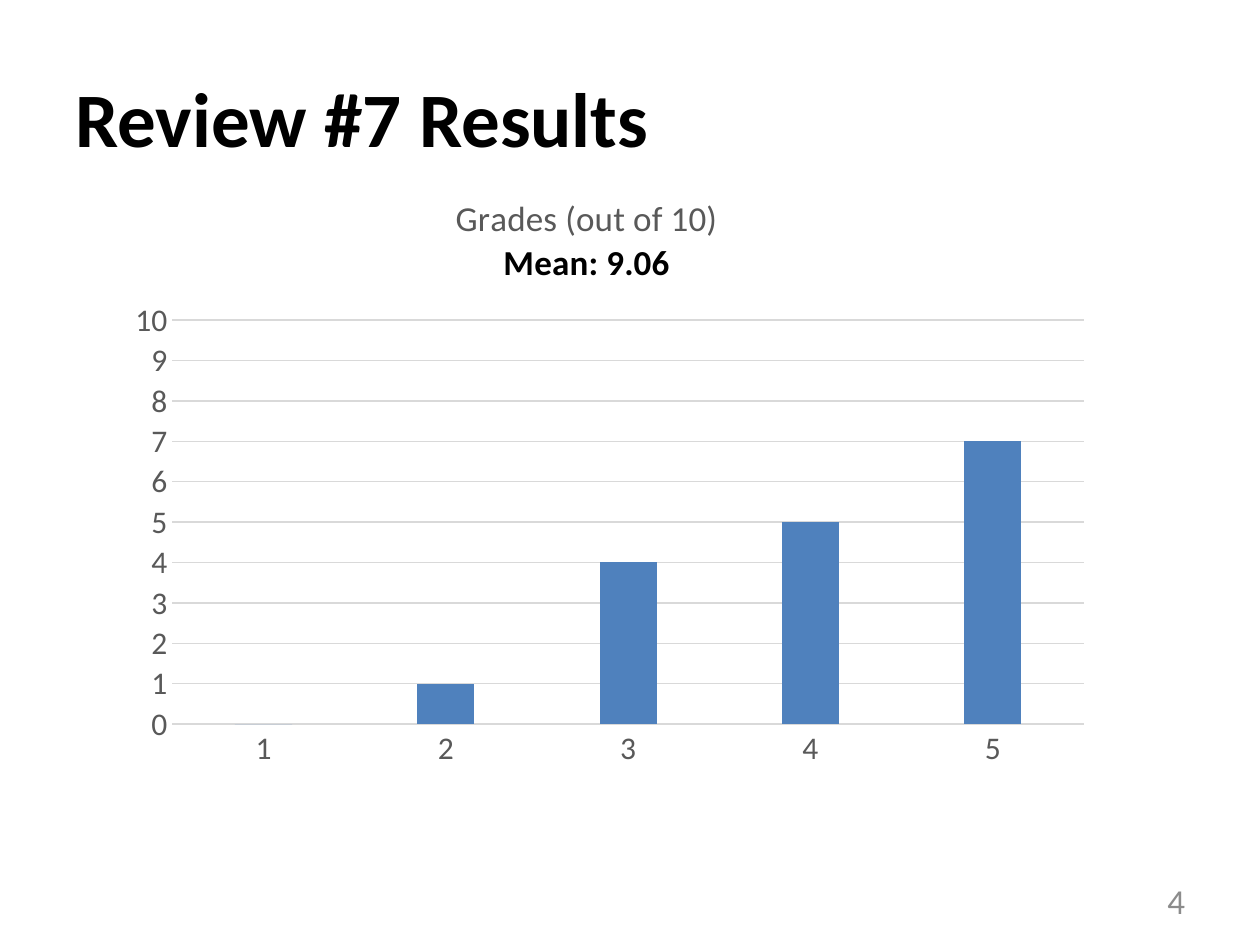
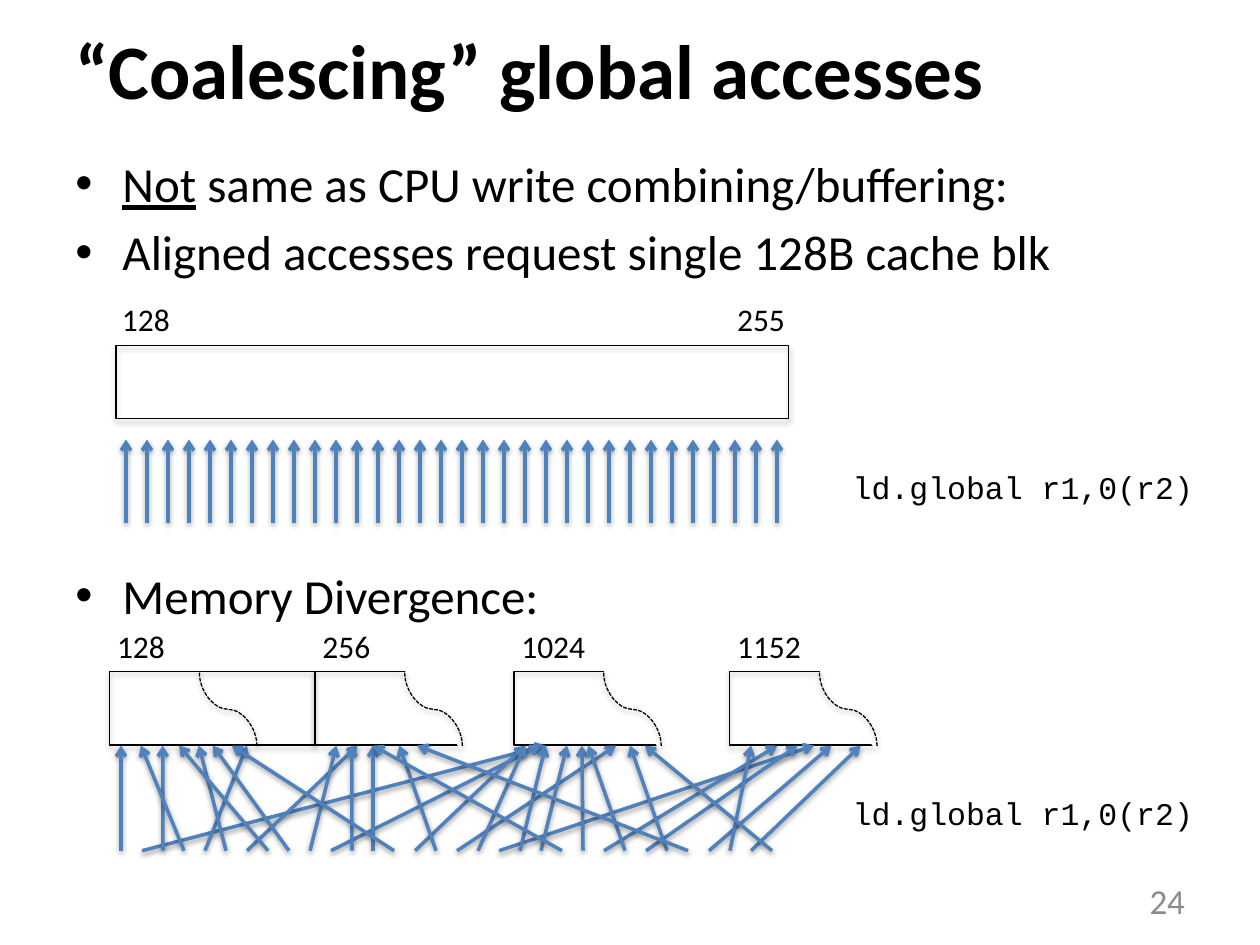
from lxml.etree import SubElement
from pptx import Presentation
from pptx.chart.data import CategoryChartData
from pptx.dml.color import RGBColor
from pptx.enum.chart import XL_CHART_TYPE, XL_TICK_MARK
from pptx.enum.dml import MSO_LINE
from pptx.enum.shapes import MSO_CONNECTOR, MSO_SHAPE
from pptx.enum.text import MSO_ANCHOR, PP_ALIGN
from pptx.oxml import parse_xml
from pptx.oxml.ns import nsdecls, qn
from pptx.util import Cm, Pt

BLACK = RGBColor(0x00, 0x00, 0x00)
WHITE = RGBColor(0xFF, 0xFF, 0xFF)
BLUE = RGBColor(0x4F, 0x81, 0xBD)
GRAY = RGBColor(0x59, 0x59, 0x59)
GRID = RGBColor(0xD9, 0xD9, 0xD9)
NUMBER = RGBColor(0x8C, 0x8C, 0x8C)
SANS = "Calibri"
MONO = "Courier New"


def add_text(shapes, x, y, w, h, text, size=18, font=SANS, color=BLACK,
             bold=None, align=None, anchor=MSO_ANCHOR.TOP, wrap=True):
    tf = shapes.add_textbox(Cm(x), Cm(y), Cm(w), Cm(h)).text_frame
    tf.word_wrap = wrap
    tf.vertical_anchor = anchor
    p = tf.paragraphs[0]
    p.alignment = align
    r = p.add_run()
    r.text = text
    r.font.size = Pt(size)
    r.font.name = font
    r.font.bold = bold
    r.font.color.rgb = color


def style_line(sp, color, width, alpha, dist):
    sp.line.color.rgb = color
    sp.line.width = Pt(width)
    sp._element.spPr.append(parse_xml(
        f'<a:effectLst {nsdecls("a")}><a:outerShdw blurRad="40000" dist="{dist}" '
        'dir="5400000" rotWithShape="0"><a:srgbClr val="000000">'
        f'<a:alpha val="{alpha}"/></a:srgbClr></a:outerShdw></a:effectLst>'))


prs = Presentation()
prs.slide_width = Cm(25.4)
prs.slide_height = Cm(19.05)

slides = []
for title, top, number in [("Review #7 Results", 0.76, "4"),
                           ("“Coalescing” global accesses", -0.2, "24")]:
    s = prs.slides.add_slide(prs.slide_layouts[6])
    add_text(s.shapes, 1.27, top, 22.86, 3.18, title, 44, bold=True,
             anchor=MSO_ANCHOR.MIDDLE)
    add_text(s.shapes, 18.21, 17.65, 5.93, 1.01, number, 20, color=NUMBER,
             align=PP_ALIGN.RIGHT, anchor=MSO_ANCHOR.MIDDLE)
    slides.append(s)
results, coalescing = slides

data = CategoryChartData()
data.categories = ["1", "2", "3", "4", "5"]
data.add_series("Series 1", [0, 1, 4, 5, 7])
chart = results.shapes.add_chart(XL_CHART_TYPE.COLUMN_CLUSTERED, Cm(2.34), Cm(2.54),
                                 Cm(19.91), Cm(13.18), data).chart
chart.has_legend = False
chart.font.name = SANS
chart.font.size = Pt(10)
plot = chart.plots[0]
plot.gap_width = 219
plot.overlap = -27
plot.vary_by_categories = False
fill = plot.series[0].format.fill
fill.solid()
fill.fore_color.rgb = BLUE

for axis in (chart.category_axis, chart.value_axis):
    axis.major_tick_mark = XL_TICK_MARK.NONE
    axis.minor_tick_mark = XL_TICK_MARK.NONE
    font = axis.tick_labels.font
    font.name = SANS
    font.size = Pt(18)
    font.color.rgb = GRAY
chart.value_axis.minimum_scale = 0
chart.value_axis.maximum_scale = 10
chart.value_axis.major_unit = 1
chart.value_axis.format.line.fill.background()
for line in (chart.category_axis.format.line, chart.value_axis.major_gridlines.format.line):
    line.color.rgb = GRID
    line.width = Pt(0.75)

tf = chart.chart_title.text_frame
for i, (text, color, bold) in enumerate([("Grades (out of 10)", GRAY, False),
                                         ("Mean: 9.06", BLACK, True)]):
    p = tf.add_paragraph() if i else tf.paragraphs[0]
    r = p.add_run()
    r.text = text
    r.font.name = SANS
    r.font.size = Pt(20)
    r.font.bold = bold
    r.font.color.rgb = color

plot_area = chart._chartSpace.chart.plotArea
title = chart.chart_title._element
for parent, spot, places in [
        (title, 1, {"xMode": "edge", "yMode": "edge", "x": 0.34, "y": 0.1}),
        (plot_area, 0, {"layoutTarget": "inner", "xMode": "edge", "yMode": "edge",
                        "x": 0.057, "y": 0.297, "w": 0.923, "h": 0.618})]:
    for old in parent.findall(qn("c:layout")):
        parent.remove(old)
    layout = parse_xml(f'<c:layout {nsdecls("c")}/>')
    manual = SubElement(layout, qn("c:manualLayout"))
    for tag, value in places.items():
        SubElement(manual, qn(f"c:{tag}")).set("val", str(value))
    parent.insert(spot, layout)

shapes = coalescing.shapes
tf = shapes.add_textbox(Cm(1.27), Cm(2.97), Cm(22.86), Cm(12.07)).text_frame
tf.word_wrap = True
bullets = [
    (5.5, [("Not", True), (" same as CPU write combining/buffering:", None)]),
    (5.5, [("Aligned accesses request single 128B cache blk", None)]),
    (162.5, [("Memory Divergence:", None)]),
]
for i, (before, runs) in enumerate(bullets):
    p = tf.add_paragraph() if i else tf.paragraphs[0]
    p.space_before = Pt(before)
    pPr = p._p.get_or_add_pPr()
    pPr.set("marL", str(Cm(0.95)))
    pPr.set("indent", str(-Cm(0.95)))
    SubElement(pPr, qn("a:buFont")).set("typeface", "Arial")
    SubElement(pPr, qn("a:buChar")).set("char", "•")
    for text, underline in runs:
        r = p.add_run()
        r.text = text
        r.font.name = SANS
        r.font.size = Pt(28)
        r.font.underline = underline
        r.font.color.rgb = BLACK

cache_block = shapes.add_shape(MSO_SHAPE.RECTANGLE, Cm(2.34), Cm(6.96), Cm(13.56), Cm(1.48))
cache_block.fill.background()
style_line(cache_block, BLACK, 0.75, 35000, 23000)
for x, label in [(2.21, "128"), (14.61, "255")]:
    add_text(shapes, x, 5.92, 1.5, 1.02, label, wrap=False)
for y in (9.32, 15.88):
    add_text(shapes, 16.94, y, 7.42, 1.02, "ld.global r1,0(r2)", font=MONO)

for x, label in [(2.21, "128"), (6.35, "256"), (10.36, "1024"), (14.71, "1152")]:
    group = shapes.add_group_shape().shapes
    block = group.add_shape(MSO_SHAPE.RECTANGLE, Cm(x), Cm(13.54), Cm(4.13), Cm(1.48))
    block.fill.background()
    style_line(block, BLACK, 0.75, 35000, 23000)
    add_text(group, x - 0.1, 12.52, 0.6 + 0.3 * len(label), 1.02, label, wrap=False)
    if label != "128":
        mask = group.add_shape(MSO_SHAPE.TRAPEZOID, Cm(x + 1.37), Cm(12.9), Cm(4.78), Cm(2.54))
        mask.adjustments[0] = 0.708
        mask.rotation = 180
        mask.shadow.inherit = False
        mask.fill.solid()
        mask.fill.fore_color.rgb = WHITE
        mask.line.fill.background()
    tear = group.add_connector(MSO_CONNECTOR.CURVE, Cm(x + 3.13), Cm(13.72),
                               Cm(x + 1.65), Cm(14.88))
    tear._element.spPr.xfrm.set("rot", "16200000")
    style_line(tear, BLACK, 0.75, 38000, 20000)
    tear.line.dash_style = MSO_LINE.SQUARE_DOT

THREAD_GAP = 2.54 / 6
scattered = [
    2.44, 11, 3.28, 2.84, 4.98, 4.01, 7.21, 3.61, 4.29, 6.78, 10.9,
    7.09, 7.52, 4.67, 10.59, 8.05, 12.42, 10.59, 16.41, 11, 11.43, 7.52,
    11.73, 15.67, 11.86, 16.08, 12.7, 8.41, 16.76, 15.14, 17.35, 13,
]
aligned = [2.54 + i * THREAD_GAP for i in range(len(scattered))]
for first, bottom, top, targets in [(2.54, 10.54, 8.86, aligned),
                                    (2.44, 17.15, 15.03, scattered)]:
    for i, target in enumerate(targets):
        arrow = shapes.add_connector(MSO_CONNECTOR.STRAIGHT, Cm(first + i * THREAD_GAP),
                                     Cm(bottom), Cm(target), Cm(top))
        style_line(arrow, BLUE, 2, 38000, 20000)
        ln = arrow._element.spPr.find(qn("a:ln"))
        SubElement(ln, qn("a:tailEnd")).set("type", "arrow")

prs.save("out.pptx")
